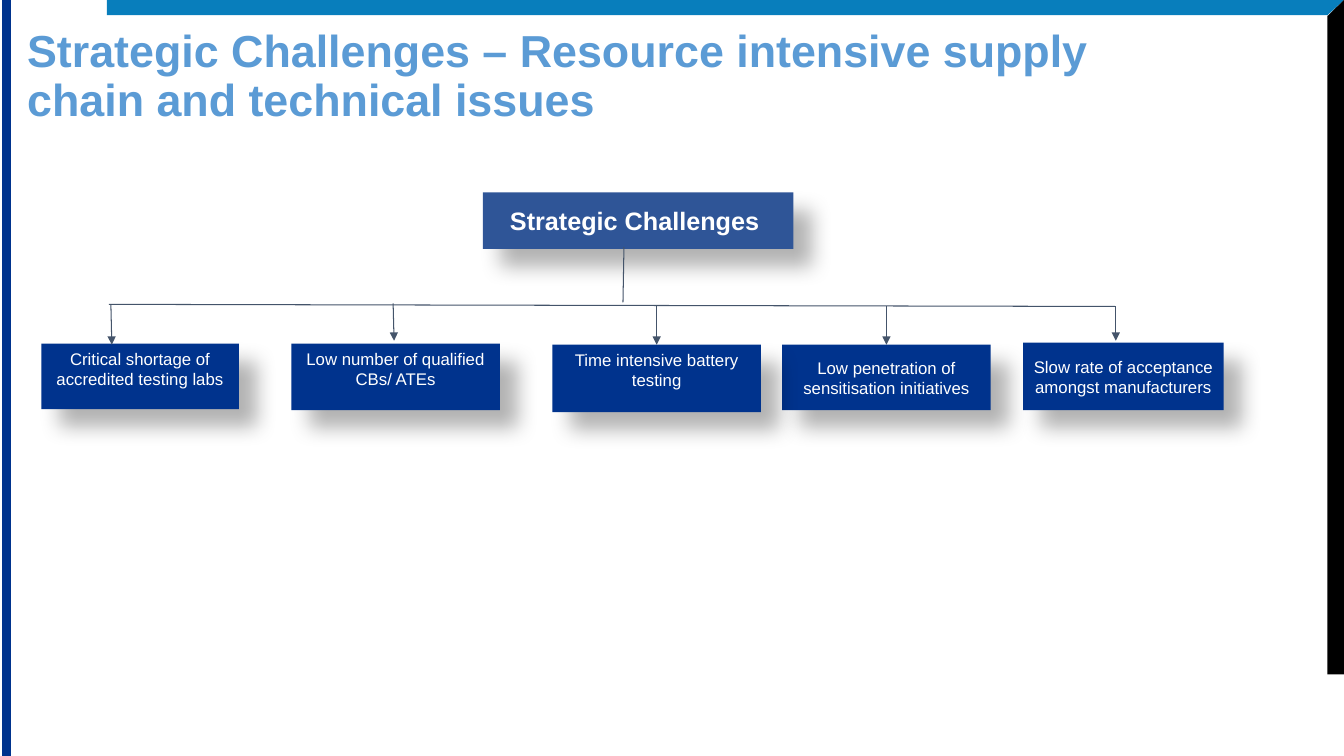
from lxml import etree
from pptx import Presentation
from pptx import util as u
from pptx.dml.color import RGBColor
from pptx.enum import shapes, text
from pptx.oxml import ns, parse_xml

NAVY = RGBColor(0x00, 0x33, 0x8D)
STEEL = RGBColor(0x2F, 0x55, 0x97)
SKY = RGBColor(0x5B, 0x9B, 0xD5)
TEAL = RGBColor(0x08, 0x7E, 0xBC)
SLATE = RGBColor(0x44, 0x54, 0x6A)
BLACK = RGBColor(0, 0, 0)
WHITE = RGBColor(255, 255, 255)

TOP, MIDDLE = text.MSO_ANCHOR.TOP, text.MSO_ANCHOR.MIDDLE
SHADOW = (
    f'<a:outerShdw {ns.nsdecls("a")} blurRad="{u.Pt(15)}" dist="{u.Pt(18)}" '
    'dir="2700000" algn="tl" rotWithShape="0"><a:srgbClr val="000000">'
    '<a:alpha val="30000"/></a:srgbClr></a:outerShdw>'
)

# Label, (left, top, width, height), anchor, arrow start, arrow end
# An arrow without an end is joined to the middle of the box's top side.
CHALLENGES = [
    ("Slow rate of acceptance amongst manufacturers",
     (730.8, 244.8, 143.3, 48.2), MIDDLE, (797, 218.9), (797, 243.4)),
    ("Low penetration of sensitisation initiatives",
     (558.7, 246.2, 149, 46.8), MIDDLE, (633.2, 218.9), None),
    ("Low number of qualified CBs/ ATEs",
     (208.1, 245.5, 149, 47.5), TOP, (280.8, 216.7), (281.5, 243.4)),
    ("Critical shortage of accredited testing labs",
     (29.5, 245.5, 141.1, 46.8), TOP, (79.2, 217.4), (79.9, 246.2)),
    ("Time intensive battery testing",
     (394.6, 246.2, 149, 48.2), TOP, (469.1, 218.2), None),
]


def points(values):
    return [u.Pt(value) for value in values]


def write(frame, words, size=12, color=WHITE, bold=False, spacing=None,
          align=text.PP_ALIGN.CENTER, anchor=MIDDLE):
    frame.word_wrap = True
    frame.vertical_anchor = anchor
    para = frame.paragraphs[0]
    para.alignment = align
    para.line_spacing = spacing
    span = para.add_run()
    span.text = words
    span.font.name = "Arial"
    span.font.size = u.Pt(size)
    span.font.bold = bold
    span.font.color.rgb = color


class Painter:
    """Draws the elements of one slide in a shared style."""

    def __init__(self, slide):
        self.shapes = slide.shapes

    def paint(self, shape, fill):
        shape.shadow.inherit = False
        shape.fill.solid()
        shape.fill.fore_color.rgb = fill
        shape.line.fill.background()
        return shape

    def polygon(self, corners, fill):
        start, *others = [points(corner) for corner in corners]
        builder = self.shapes.build_freeform(*start)
        builder.add_line_segments(others, close=True)
        return self.paint(builder.convert_to_shape(), fill)

    def rectangle(self, area, fill):
        kind = shapes.MSO_SHAPE.RECTANGLE
        return self.paint(self.shapes.add_shape(kind, *points(area)), fill)

    def box(self, words, area, fill, **style):
        """Add a labelled rectangle that casts a soft shadow."""
        box = self.rectangle(area, fill)
        box._element.spPr.find(ns.qn("a:effectLst")).append(parse_xml(SHADOW))
        write(box.text_frame, words, **style)
        return box

    def title(self, words, area):
        frame = self.shapes.add_textbox(*points(area)).text_frame
        frame.margin_left = frame.margin_right = 0
        frame.margin_top = frame.margin_bottom = 0
        write(frame, words, size=32, color=SKY, bold=True, spacing=0.9,
              align=text.PP_ALIGN.LEFT, anchor=TOP)

    def line(self, start, end, target=None, arrow=False):
        line = self.shapes.add_connector(
            shapes.MSO_CONNECTOR.STRAIGHT, *points(start), *points(end))
        line.line.color.rgb = SLATE
        line.line.width = u.Pt(0.75)
        if arrow:
            outline = line.line._get_or_add_ln()
            etree.SubElement(outline, ns.qn("a:tailEnd"), type="triangle")
        etree.SubElement(line._element.spPr, ns.qn("a:effectLst"))
        if target is not None:
            line.end_connect(target, 0)


def main():
    deck = Presentation()
    deck.slide_width, deck.slide_height = u.Pt(960), u.Pt(540)
    page = Painter(deck.slides.add_slide(deck.slide_layouts[6]))

    page.polygon([(948.2, 10.8), (960, 0), (76.3, 0), (76.3, 10.8)], TEAL)
    page.polygon([(948.2, 11.5), (960, 0), (960, 481.7), (948.2, 481.7)], BLACK)
    stripe = page.rectangle((2.2, 0, 5, 540), NAVY)
    stripe.line.color.rgb = NAVY
    stripe.line.width = u.Pt(1)

    page.title("Strategic Challenges – Resource intensive supply chain "
               "and technical issues", (19.4, 20.9, 824.4, 28.1))
    page.box("Strategic Challenges ", (344.9, 137.5, 221.8, 40.3), STEEL,
             size=18, bold=True)
    page.line((445.7, 176.4), (445, 216))
    page.line((77.8, 217.4), (796.3, 218.9))

    for label, area, anchor, start, end in CHALLENGES:
        box = page.box(label, area, NAVY, anchor=anchor)
        target = None if end else box
        page.line(start, end or (start[0], area[1]), target, arrow=True)

    deck.save("out.pptx")


if __name__ == "__main__":
    main()
